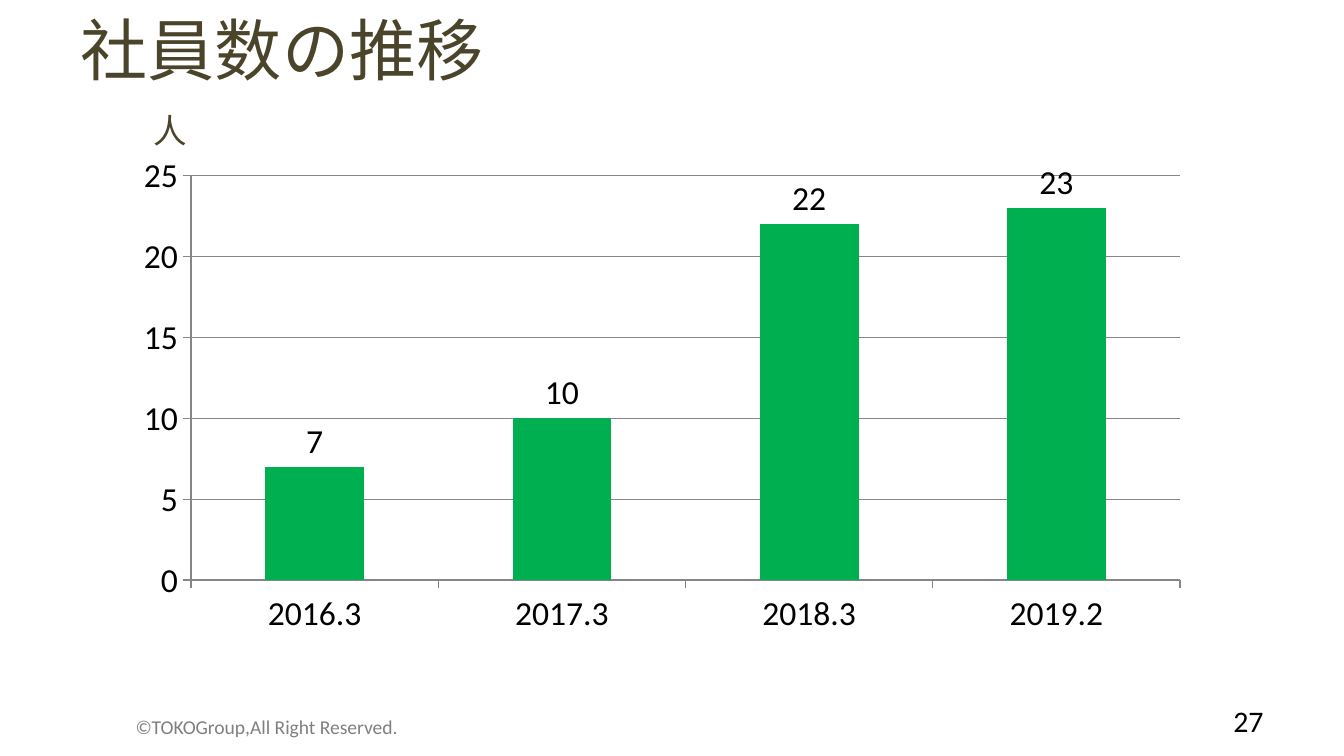
from pptx import Presentation, util as u
from pptx.chart import data
from pptx.dml.color import RGBColor
from pptx.enum import chart as kinds, text

BROWN = RGBColor(0x4A, 0x45, 0x2A)
GREEN = RGBColor(0x00, 0xB0, 0x50)
GREY = RGBColor(0x80, 0x80, 0x80)
RULE = RGBColor(0x86, 0x86, 0x86)
BLACK = RGBColor(0, 0, 0)
FONT = "Calibri"

deck = Presentation()
deck.slide_width = u.Inches(10)
deck.slide_height = deck.slide_width * 9 // 16
col, row = deck.slide_width / 100, deck.slide_height / 100
slide = deck.slides.add_slide(deck.slide_layouts[6])


def place(x, y, w, h):
    return int(x * col), int(y * row), int(w * col), int(h * row)


LEFT, RIGHT = text.PP_ALIGN.LEFT, text.PP_ALIGN.RIGHT
MID, TOP = text.MSO_ANCHOR.MIDDLE, text.MSO_ANCHOR.TOP
labels = [
    ("社員数の推移", (5, -0.36, 45.8, 13.7), 36, BROWN, LEFT, MID, True),
    ("©TOKOGroup,All Right Reserved.", (9.1, 93.4, 25.5, 5.34), 10.5, GREY, LEFT, MID, True),
    ("27", (71.7, 92.7, 23.3, 5.34), 16, BLACK, RIGHT, MID, True),
    ("人", (10.4, 13.65, 4.5, 7.12), 18, BROWN, LEFT, TOP, False),
]

spot = place(9.1, 19.2, 80.3, 66)
staff = data.CategoryChartData()
staff.categories = ["2016.3", "2017.3", "2018.3", "2019.2"]
staff.add_series("Series 1", [7, 10, 22, 23])
chart = slide.shapes.add_chart(kinds.XL_CHART_TYPE.COLUMN_CLUSTERED, *spot, staff).chart
chart.has_legend = False
chart.has_title = False
chart.font.name = FONT
chart.font.size = u.Pt(18)
chart.font.color.rgb = BLACK

value = chart.value_axis
value.minimum_scale, value.maximum_scale, value.major_unit = 0, 25, 5
value.has_major_gridlines = True
for line in (value.major_gridlines.format.line, value.format.line, chart.category_axis.format.line):
    line.color.rgb = RULE
    line.width = u.Pt(0.75)
for axis in (value, chart.category_axis):
    axis.major_tick_mark = kinds.XL_TICK_MARK.OUTSIDE

plot = chart.plots[0]
plot.gap_width = 150
plot.vary_by_categories = False
bars = plot.series[0]
bars.format.fill.solid()
bars.format.fill.fore_color.rgb = GREEN
bars.data_labels.show_value = True
bars.data_labels.position = kinds.XL_LABEL_POSITION.OUTSIDE_END

for words, area, size, tint, side, hold, wrap in labels:
    frame = slide.shapes.add_textbox(*place(*area)).text_frame
    frame.word_wrap = wrap
    frame.vertical_anchor = hold
    if not wrap:
        frame.auto_size = text.MSO_AUTO_SIZE.SHAPE_TO_FIT_TEXT
    para = frame.paragraphs[0]
    para.alignment = side
    run = para.add_run()
    run.text = words
    run.font.name = FONT
    run.font.size = u.Pt(size)
    run.font.color.rgb = tint

deck.save("out.pptx")
